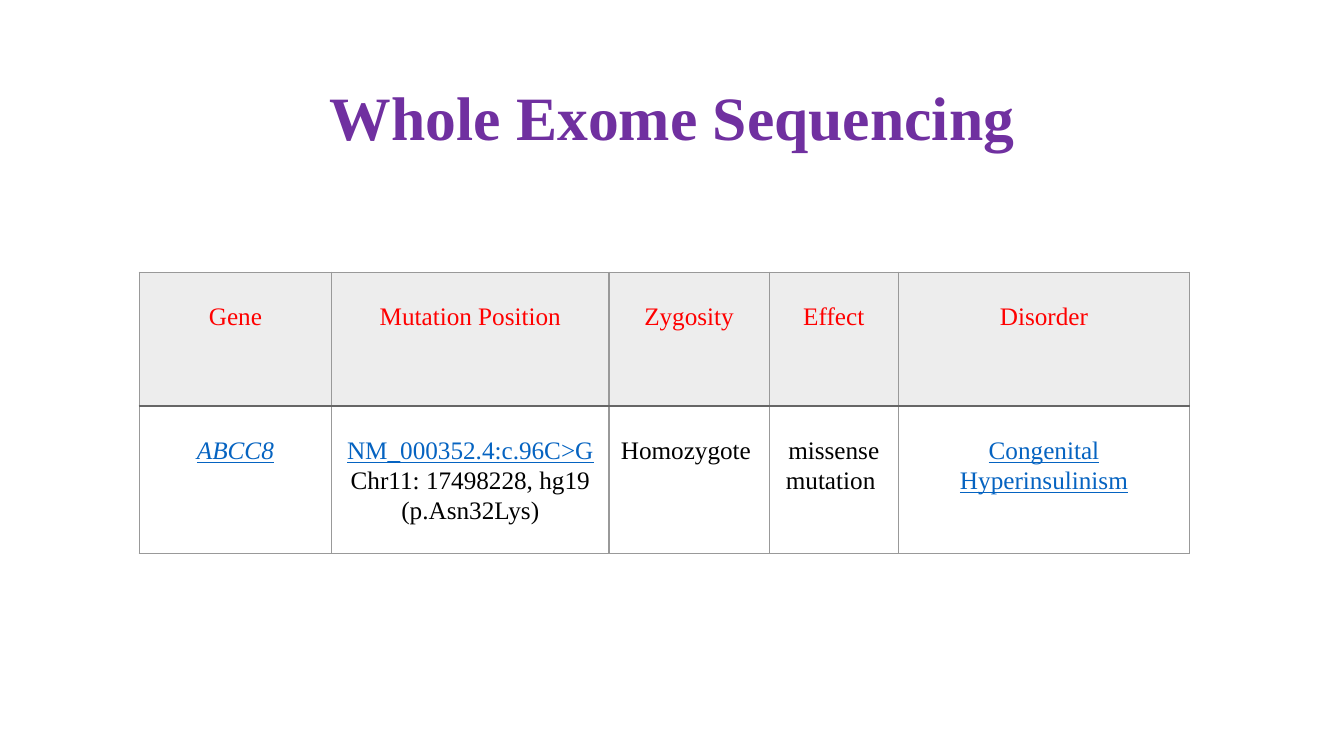
from dataclasses import dataclass

from lxml import etree
from pptx import Presentation
from pptx import util as u
from pptx.dml import color
from pptx.enum import text
from pptx.oxml import ns

COLORS = {
    "title": "7030A0",
    "header": "FF0000",
    "header_fill": "EDEDED",
    "body": "000000",
    "link": "0563C1",
    "border": "999999",
    "divider": "666666",
}
FONT = "Times New Roman"
COLUMN_WIDTHS = (1.91, 2.75, 1.59, 1.28, 2.89)
ROW_HEIGHTS = (1.33, 1.46)
CELL_FORMAT = {
    "margin_left": u.Inches(0.07),
    "margin_right": u.Inches(0.07),
    "margin_top": u.Inches(0.29),
    "margin_bottom": u.Inches(0),
    "vertical_anchor": text.MSO_ANCHOR.TOP,
}
PARAGRAPH_FORMAT = {"alignment": text.PP_ALIGN.CENTER, "line_spacing": 1.07}


@dataclass(frozen=True)
class Line:
    words: str
    color: str = "body"
    size: float = 18
    bold: bool = False
    italic: bool = False
    underline: bool = False


HEADERS = ("Gene", "Mutation Position", "Zygosity", "Effect", "Disorder")
FINDINGS = (
    (Line("ABCC8", "link", italic=True, underline=True),),
    (
        Line("NM_000352.4:c.96C>G", "link", underline=True),
        Line("Chr11: 17498228, hg19"),
        Line("(p.Asn32Lys)"),
    ),
    (Line("Homozygote "),),
    (Line("missense mutation "),),
    (Line("Congenital Hyperinsulinism", "link", underline=True),),
)


def apply_format(target, values: dict) -> None:
    for name, value in values.items():
        setattr(target, name, value)


def write_lines(text_frame, lines: tuple[Line, ...]) -> None:
    for index, line in enumerate(lines):
        paragraph = text_frame.add_paragraph() if index else text_frame.paragraphs[0]
        apply_format(paragraph, PARAGRAPH_FORMAT)
        run = paragraph.add_run()
        run.text = line.words
        apply_format(run.font, {
            "name": FONT,
            "size": u.Pt(line.size),
            "bold": line.bold,
            "italic": line.italic,
            "underline": line.underline,
        })
        run.font.color.rgb = color.RGBColor.from_string(COLORS[line.color])


def set_borders(cell, divider_side: str) -> None:
    """Draw thin borders, with a heavier one on the side between the two rows."""
    properties = cell._tc.get_or_add_tcPr()
    for index, side in enumerate(("lnL", "lnR", "lnT", "lnB")):
        name, points = ("divider", 1.5) if side == divider_side else ("border", 1)
        border = etree.Element(ns.qn(f"a:{side}"), w=str(u.Pt(points)))
        fill = etree.SubElement(border, ns.qn("a:solidFill"))
        etree.SubElement(fill, ns.qn("a:srgbClr"), val=COLORS[name])
        properties.insert(index, border)


def add_title(slide) -> None:
    title = slide.shapes.title
    apply_format(title, {
        "left": u.Inches(0.92),
        "top": u.Inches(0.4),
        "width": u.Inches(11.5),
        "height": u.Inches(1.45),
    })
    title.text_frame.vertical_anchor = text.MSO_ANCHOR.MIDDLE
    write_lines(title.text_frame, (Line("Whole Exome Sequencing", "title", 44, bold=True),))
    title.text_frame.paragraphs[0].space_after = u.Pt(8)


def add_findings_table(slide) -> None:
    table = slide.shapes.add_table(
        len(ROW_HEIGHTS), len(COLUMN_WIDTHS), u.Inches(1.38), u.Inches(2.7),
        u.Inches(sum(COLUMN_WIDTHS)), u.Inches(sum(ROW_HEIGHTS)),
    ).table
    apply_format(table, {"first_row": False, "horz_banding": False})
    for column, width in zip(table.columns, COLUMN_WIDTHS):
        column.width = u.Inches(width)
    for row, height in zip(table.rows, ROW_HEIGHTS):
        row.height = u.Inches(height)

    header_lines = tuple((Line(header, "header"),) for header in HEADERS)
    for row_index, contents in enumerate((header_lines, FINDINGS)):
        for column_index, lines in enumerate(contents):
            cell = table.cell(row_index, column_index)
            apply_format(cell, CELL_FORMAT)
            write_lines(cell.text_frame, lines)
            if row_index == 0:
                cell.fill.solid()
                cell.fill.fore_color.rgb = color.RGBColor.from_string(COLORS["header_fill"])
            else:
                cell.fill.background()
            set_borders(cell, "lnT" if row_index else "lnB")


def main() -> None:
    presentation = Presentation()
    presentation.slide_width = u.Inches(13.33)
    presentation.slide_height = u.Inches(7.5)
    slide = presentation.slides.add_slide(presentation.slide_layouts.get_by_name("Title Only"))
    add_title(slide)
    add_findings_table(slide)
    presentation.save("out.pptx")


if __name__ == "__main__":
    main()
